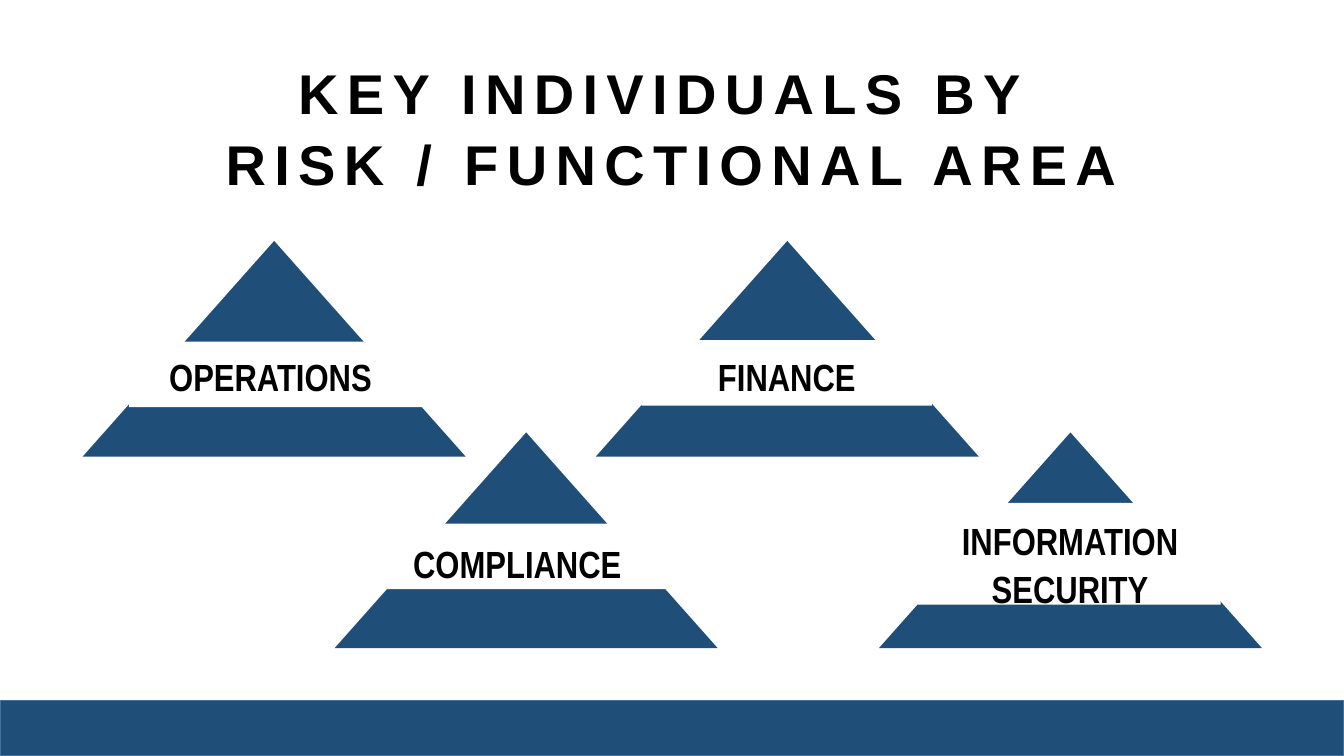
from dataclasses import dataclass

from pptx import Presentation
from pptx.dml.color import RGBColor
from pptx.enum.shapes import MSO_SHAPE
from pptx.enum.text import MSO_ANCHOR, MSO_AUTO_SIZE, PP_ALIGN
from pptx.shapes.autoshape import Shape
from pptx.shapes.shapetree import GroupShapes, SlideShapes
from pptx.text.text import TextFrame
from pptx.util import Inches, Pt

RECTANGLE, TRIANGLE = MSO_SHAPE.RECTANGLE, MSO_SHAPE.ISOSCELES_TRIANGLE
LEFT, CENTER = PP_ALIGN.LEFT, PP_ALIGN.CENTER
TOP, NO_AUTOFIT = MSO_ANCHOR.TOP, MSO_AUTO_SIZE.NONE
TITLE_ONLY = 5

SLIDE_WIDTH, SLIDE_HEIGHT = Inches(13.333), Inches(7.5)
BLUE, BAR_EDGE, WHITE, BLACK = "1F4E79", "43739E", "FFFFFF", "000000"
LINE_SPACING = 1.06
LETTER_SPACING = 600  # hundredths of a point


@dataclass(frozen=True)
class Box:
    """A rectangle in percent of the slide's width and height."""
    left: float
    top: float
    width: float
    height: float

    def lengths(self) -> tuple[int, int, int, int]:
        return (int(SLIDE_WIDTH * self.left / 100), int(SLIDE_HEIGHT * self.top / 100),
                int(SLIDE_WIDTH * self.width / 100), int(SLIDE_HEIGHT * self.height / 100))


@dataclass(frozen=True)
class Pyramid:
    lines: tuple[str, ...]
    left: float
    top: float
    gap: Box
    label: Box
    alignment: PP_ALIGN = CENTER


PYRAMID_WIDTH, PYRAMID_HEIGHT = 28.5, 28.53
UPPER_ROW, LOWER_ROW = 31.87, 57.2
TITLE_LINES = ("KEY INDIVIDUALS BY ", "RISK / FUNCTIONAL AREA")
TITLE_BOX = Box(4.95, 6.53, 90, 19.33)
FOOTER_BAR = Box(0, 92.67, 100, 7.33)
PYRAMIDS = (
    Pyramid(("FINANCE",), 44.33, UPPER_ROW,
            Box(47.74, 45, 21.6, 8.67), Box(50.03, 45.73, 17.03, 7.47)),
    Pyramid(("COMPLIANCE",), 24.9, LOWER_ROW,
            Box(28.39, 69.27, 21.6, 8.67), Box(30, 70.53, 18.08, 7.47), LEFT),
    Pyramid(("INFORMATION", "SECURITY"), 65.4, LOWER_ROW,
            Box(67.65, 66.53, 23.18, 13.47), Box(70.58, 67.47, 18.08, 13.47)),
    Pyramid(("OPERATIONS",), 6.15, UPPER_ROW,
            Box(9.6, 45.2, 22.43, 8.67), Box(11.85, 45.73, 17.03, 7.47), LEFT),
)


def color(value: str) -> RGBColor:
    return RGBColor.from_string(value)


def add_filled_shape(shapes: SlideShapes | GroupShapes, kind: MSO_SHAPE,
                     box: Box, fill: str) -> Shape:
    shape = shapes.add_shape(kind, *box.lengths())
    shape.shadow.inherit = False
    shape.fill.solid()
    shape.fill.fore_color.rgb = color(fill)
    shape.line.fill.background()
    return shape


def write_lines(frame: TextFrame, lines: tuple[str, ...], font_name: str,
                size: float, alignment: PP_ALIGN) -> None:
    frame.word_wrap = True
    frame.auto_size = NO_AUTOFIT
    frame.vertical_anchor = TOP
    for index, line in enumerate(lines):
        paragraph = frame.add_paragraph() if index else frame.paragraphs[0]
        paragraph.add_run().text = line
        paragraph.alignment = alignment
        paragraph.line_spacing = LINE_SPACING
        paragraph.space_before = Pt(0)
        font = paragraph.font
        font.name, font.size, font.bold = font_name, Pt(size), True
        font.color.rgb = color(BLACK)


def format_title(title: Shape) -> None:
    title.left, title.top, title.width, title.height = TITLE_BOX.lengths()
    write_lines(title.text_frame, TITLE_LINES, "Arial", 40, CENTER)
    for paragraph in title.text_frame.paragraphs:
        for run in paragraph.runs:
            run.font._element.set("spc", str(LETTER_SPACING))


def add_pyramid(shapes: SlideShapes, pyramid: Pyramid) -> None:
    """Draw a triangle split by a white gap that holds the label."""
    group = shapes.add_group_shape().shapes
    outline = Box(pyramid.left, pyramid.top, PYRAMID_WIDTH, PYRAMID_HEIGHT)
    add_filled_shape(group, TRIANGLE, outline, BLUE)
    add_filled_shape(group, RECTANGLE, pyramid.gap, WHITE)
    label = group.add_textbox(*pyramid.label.lengths())
    write_lines(label.text_frame, pyramid.lines, "Arial Narrow", 27, pyramid.alignment)


def main() -> None:
    presentation = Presentation()
    presentation.slide_width, presentation.slide_height = SLIDE_WIDTH, SLIDE_HEIGHT
    slide = presentation.slides.add_slide(presentation.slide_layouts[TITLE_ONLY])
    format_title(slide.shapes.title)
    footer = add_filled_shape(slide.shapes, RECTANGLE, FOOTER_BAR, BLUE)
    footer.line.color.rgb = color(BAR_EDGE)
    footer.line.width = Pt(1)
    for pyramid in PYRAMIDS:
        add_pyramid(slide.shapes, pyramid)
    presentation.save("out.pptx")


if __name__ == "__main__":
    main()
